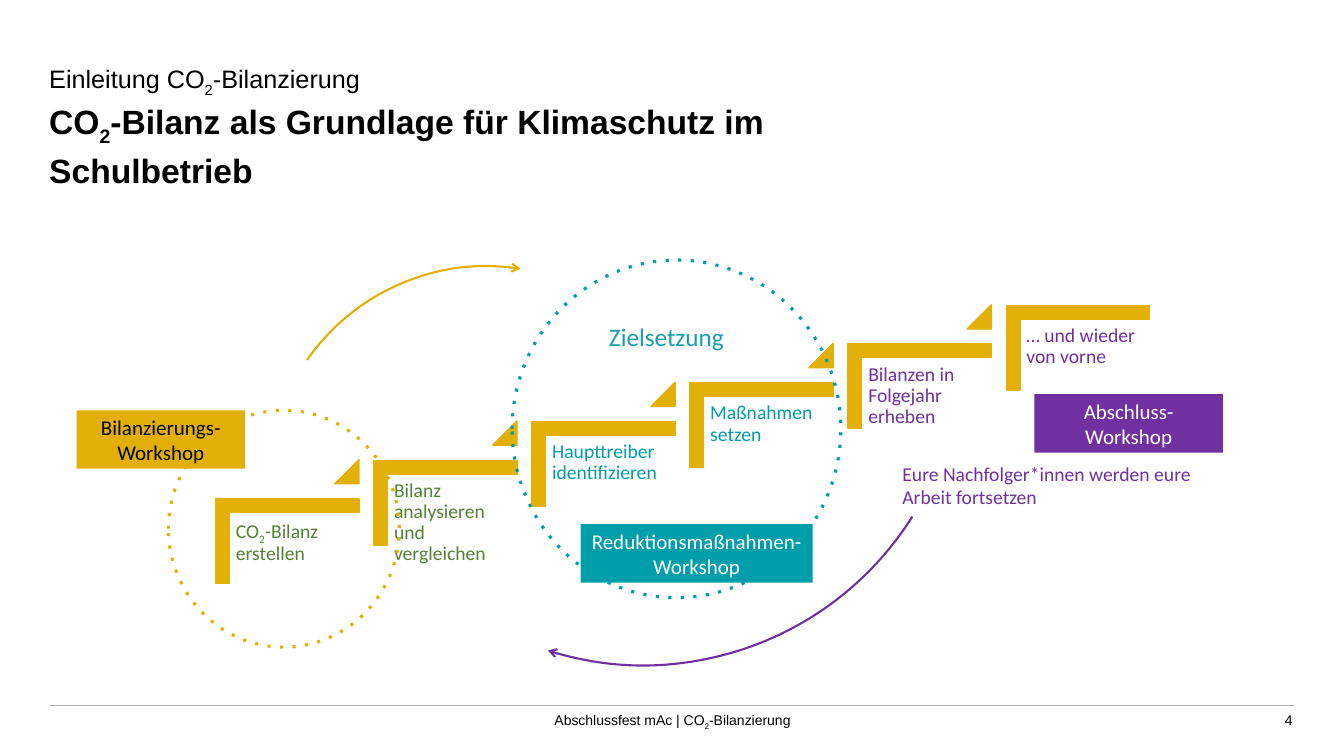
import pptx
import pptx.dml.color
import pptx.enum.shapes
import pptx.enum.text
import pptx.oxml.ns
import pptx.util
import lxml.etree

Inches = pptx.util.Inches
RGB = pptx.dml.color.RGBColor
SHAPE = pptx.enum.shapes.MSO_SHAPE
STEP_SHAPE = SHAPE.from_xml("corner")
ALIGN = pptx.enum.text.PP_ALIGN
ANCHOR = pptx.enum.text.MSO_ANCHOR
qn = pptx.oxml.ns.qn

GOLD = RGB(0xE3, 0xAF, 0x09)
LABEL_GOLD = RGB(0xE2, 0xAF, 0x08)
TEAL = RGB(0x00, 0x9E, 0xAA)
GOAL_TEAL = RGB(0x19, 0x9E, 0xAB)
PURPLE = RGB(0x70, 0x30, 0xA0)
GREEN = RGB(0x54, 0x82, 0x35)
GRAY = RGB(0xB0, 0xB0, 0xB0)
BLACK = RGB(0, 0, 0)
WHITE = RGB(0xFF, 0xFF, 0xFF)

STEPS = [
    ("CO₂-Bilanz erstellen", GREEN, 1.28),
    ("Bilanz analysieren und vergleichen", GREEN, 1.28),
    ("Haupttreiber identifizieren", TEAL, 1.43),
    ("Maßnahmen setzen", TEAL, 1.28),
    ("Bilanzen in Folgejahr erheben", PURPLE, 1.28),
    ("… und wieder von vorne", PURPLE, 1.28),
]
WORKSHOPS = [
    ((0.76, 4.07, 1.67, 0.58), "Bilanzierungs-Workshop", LABEL_GOLD, BLACK),
    ((5.76, 5.2, 2.3, 0.58), "Reduktionsmaßnahmen-Workshop", TEAL, WHITE),
    ((10.26, 3.91, 1.87, 0.58), "Abschluss-Workshop", PURPLE, WHITE),
]


def add_run(p, text, size, color, name="Calibri", bold=False, subscript=False):
    r = p.add_run()
    r.text = text
    font = {"size": pptx.util.Pt(size), "name": name, "bold": bold}
    for key, value in font.items():
        setattr(r.font, key, value)
    r.font.color.rgb = color
    if subscript:
        r._r.get_or_add_rPr().set("baseline", "-25000")


def add_runs(p, text, *font):
    for i, line in enumerate(text.split("\n")):
        if i:
            p.add_line_break()
        for j, part in enumerate(line.split("₂")):
            if j:
                add_run(p, "2", *font, subscript=True)
            add_run(p, part, *font)


def format_text(sp, inset, align=ALIGN.LEFT, spacing=None, anchor=ANCHOR.TOP):
    tf = sp.text_frame
    x, y = Inches(inset[0]), Inches(inset[1])
    frame = {"word_wrap": True, "vertical_anchor": anchor, "margin_left": x,
             "margin_right": x, "margin_top": y, "margin_bottom": y}
    for key, value in frame.items():
        setattr(tf, key, value)
    p = tf.paragraphs[0]
    p.alignment = align
    if spacing:
        p.line_spacing = spacing
    return p


def add_text(shapes, box, inset, **layout):
    return format_text(shapes.add_textbox(*map(Inches, box)), inset, **layout)


def add_shape(shapes, kind, box, fill=None, line=None, width=1, rotation=0, adj=()):
    sp = shapes.add_shape(kind, *map(Inches, box))
    sp.shadow.inherit = False
    sp.rotation = rotation
    for i, value in enumerate(adj):
        sp.adjustments[i] = value
    if fill:
        sp.fill.solid()
        sp.fill.fore_color.rgb = fill
    else:
        sp.fill.background()
    if line:
        sp.line.color.rgb = line
        sp.line.width = pptx.util.Pt(width)
    else:
        sp.line.fill.background()
    return sp


def add_line_detail(sp, tag, key, value):
    ln = sp._element.spPr.find(qn("a:ln"))
    lxml.etree.SubElement(ln, qn(tag)).set(key, value)


def add_title(s, box):
    p = add_text(s.shapes, box, (0.1, 0.05), spacing=1.07)
    add_runs(p, "Einleitung CO₂-Bilanzierung", 18, BLACK, "Arial")
    p.add_line_break()
    add_runs(p, "CO₂-Bilanz als Grundlage für Klimaschutz im Schulbetrieb",
             24, BLACK, "Arial", True)


def add_staircase(s, first, last):
    shapes = s.shapes.add_group_shape().shapes
    gaps = len(STEPS) - 1
    dx, dy = ((b - a) / gaps for a, b in zip(first, last))
    for i, (text, color, width) in enumerate(STEPS):
        x, y = first[0] + i * dx, first[1] + i * dy
        add_shape(shapes, STEP_SHAPE, (x, y, 0.84, 1.42), GOLD, GOLD,
                  rotation=90, adj=(0.161, 0.161))
        p = add_text(shapes, (x - 0.15, y + 0.43, width, 1.11), (0.06, 0.06), spacing=0.9)
        add_runs(p, text, 14, color)
        if i < gaps:
            add_shape(shapes, SHAPE.ISOSCELES_TRIANGLE, (x + 0.89, y - 0.1, 0.24, 0.24),
                      GOLD, GOLD, adj=(1,))


def add_phase_circle(s, box, color):
    sp = add_shape(s.shapes, SHAPE.OVAL, box, line=color, width=2.25)
    add_line_detail(sp, "a:prstDash", "val", "dot")


def add_arc_arrow(s, box, color, rotation, start):
    sp = add_shape(s.shapes, SHAPE.ARC, box, line=color, width=1.5,
                   rotation=rotation, adj=(start, 0))
    add_line_detail(sp, "a:tailEnd", "type", "arrow")


def add_note(s, box, text, size, color):
    add_runs(add_text(s.shapes, box, (0.07, 0.04)), text, size, color)


def add_workshop(s, box, text, fill, color):
    sp = add_shape(s.shapes, SHAPE.RECTANGLE, box, fill)
    p = format_text(sp, (0.07, 0.04), ALIGN.CENTER, anchor=ANCHOR.MIDDLE)
    add_runs(p, text, 15, color)


def add_footer(s, left, top, right):
    rule = s.shapes.add_connector(pptx.enum.shapes.MSO_CONNECTOR.STRAIGHT,
                                  *map(Inches, (left, top, right, top)))
    rule.line.color.rgb = GRAY
    rule.line.width = pptx.util.Pt(1)
    lxml.etree.SubElement(rule._element.spPr, qn("a:effectLst"))
    p = add_text(s.shapes, (left + 1.64, top + 0.01, 9.06, 0.32), (0.1, 0.05),
                 align=ALIGN.CENTER)
    add_runs(p, "Abschlussfest mAc | CO₂-Bilanzierung", 10, BLACK, "Arial")
    p = add_text(s.shapes, (right - 0.69, top + 0.01, 0.68, 0.32), (0, 0.05),
                 align=ALIGN.RIGHT)
    add_runs(p, "4", 10, BLACK, "Arial")


def main():
    prs = pptx.Presentation()
    prs.slide_width, prs.slide_height = Inches(13.33), Inches(7.5)
    s = prs.slides.add_slide(prs.slide_layouts[6])
    add_title(s, (0.39, 0.56, 9.26, 1.36))
    add_staircase(s, (2.43, 4.66), (10.27, 2.74))
    add_phase_circle(s, (5.08, 2.58, 3.26, 3.35), TEAL)
    add_note(s, (8.88, 4.54, 3.26, 0.55),
             "Eure Nachfolger*innen werden eure\nArbeit fortsetzen", 14, PURPLE)
    add_note(s, (5.97, 3.15, 2.53, 0.38), "Zielsetzung", 18, GOAL_TEAL)
    add_phase_circle(s, (1.67, 4.07, 2.29, 2.35), GOLD)
    add_arc_arrow(s, (2.66, 2.64, 4.33, 4.33), GOLD, 279, 177.46)
    add_arc_arrow(s, (3.23, 0.3, 6.3, 6.3), PURPLE, 107.5, 170.77)
    for workshop in WORKSHOPS:
        add_workshop(s, *workshop)
    add_footer(s, 0.5, 7, 12.83)
    prs.save("out.pptx")


if __name__ == "__main__":
    main()
